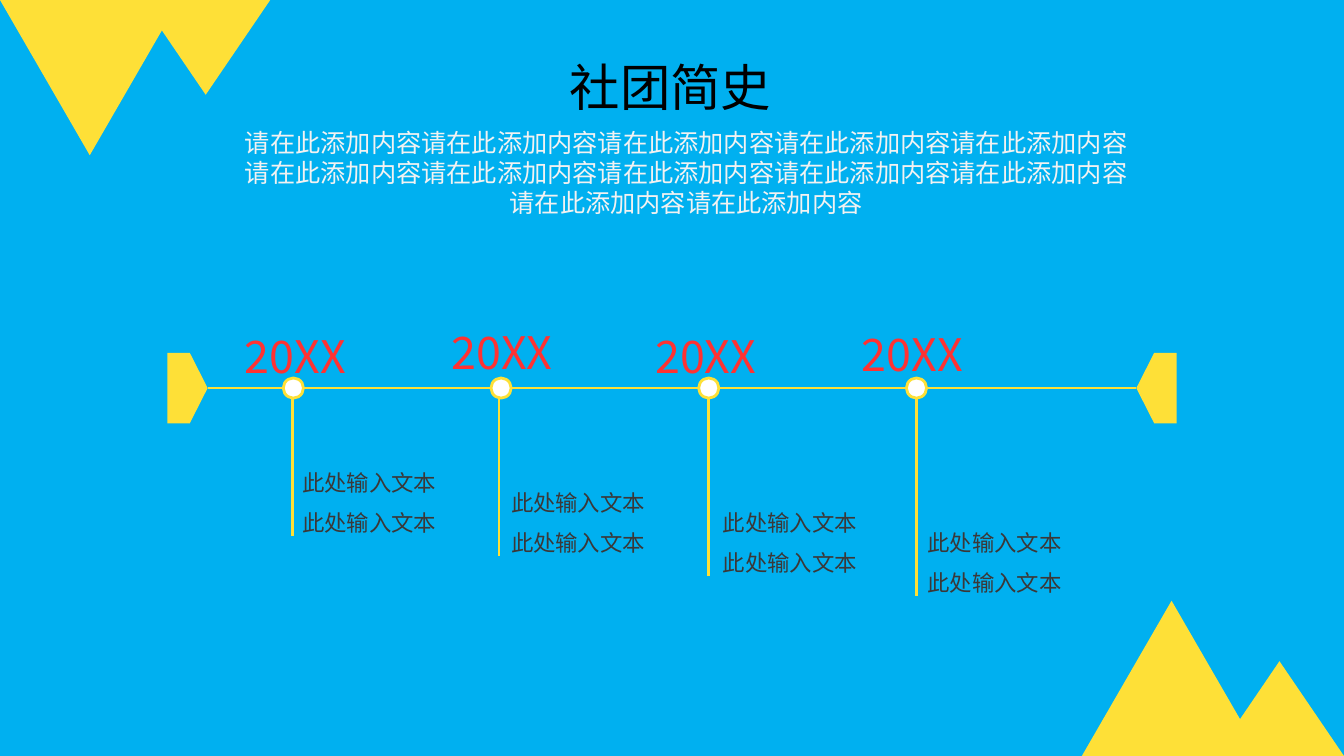
from dataclasses import dataclass

from lxml import etree
from pptx import Presentation
from pptx.dml.color import RGBColor
from pptx.enum.shapes import MSO_CONNECTOR, MSO_SHAPE
from pptx.enum.text import MSO_ANCHOR, MSO_AUTO_SIZE, PP_ALIGN
from pptx.oxml.ns import qn
from pptx.util import Inches, Pt

TRIANGLE, PENTAGON, OVAL = MSO_SHAPE.ISOSCELES_TRIANGLE, MSO_SHAPE.PENTAGON, MSO_SHAPE.OVAL
STRAIGHT = MSO_CONNECTOR.STRAIGHT
CENTER, LEFT = PP_ALIGN.CENTER, PP_ALIGN.LEFT
TOP, BOTTOM = MSO_ANCHOR.TOP, MSO_ANCHOR.BOTTOM

BLUE, YELLOW, WHITE = "00B0F0", "FEE037", "FFFFFF"
BLACK, PALE, RED, GREY = "000000", "F2F2F2", "FF3232", "3B3838"
SLIDE_W, SLIDE_H = 13.33, 7.5
AXIS_Y, AXIS_START, AXIS_END = 3.85, 2.06, 11.27
DOT, DOT_LEFT, DOT_STEP = 0.2, 2.81, 2.06
STEM_TOP, STEM_END, STEM_STEP = 3.94, 5.32, 0.197
NOTE_TOP = 3.89


@dataclass(frozen=True)
class Box:
    left: float
    top: float
    width: float
    height: float

    def lengths(self) -> list:
        return [Inches(v) for v in (self.left, self.top, self.width, self.height)]


@dataclass(frozen=True)
class Style:
    font: str
    size: int
    color: str
    align: PP_ALIGN = CENTER
    spacing: float | None = None


@dataclass(frozen=True)
class Milestone:
    year_left: float
    year_top: float
    stem_x: float
    note_left: float


TITLE = Style("Calibri", 36, BLACK)
INTRO = Style("Calibri", 18, PALE)
YEAR = Style("Noto Sans CJK JP", 32, RED)
NOTE = Style("Noto Sans CJK SC", 16, GREY, LEFT, 1.5)

MILESTONES = [
    Milestone(2.29, 3.21, 2.9, 2.9),
    Milestone(4.34, 3.17, 4.95, 4.97),
    Milestone(6.36, 3.21, 7.03, 7.07),
    Milestone(8.41, 3.19, 9.09, 9.1),
]
BIG_PEAK, SMALL_PEAK = (1.78, 1.54), (1.28, 0.94)


def rgb(color: str) -> RGBColor:
    return RGBColor.from_string(color)


def add_shape(shapes, kind: MSO_SHAPE, box: Box, fill: str, line: str | None = None):
    sp = shapes.add_shape(kind, *box.lengths())
    sp.shadow.inherit = False
    sp.fill.solid()
    sp.fill.fore_color.rgb = rgb(fill)
    if line:
        sp.line.color.rgb = rgb(line)
        sp.line.width = Pt(2)
    else:
        sp.line.fill.background()
    return sp


def add_line(shapes, x1: float, y1: float, x2: float, y2: float) -> None:
    cxn = shapes.add_connector(STRAIGHT, *[Inches(v) for v in (x1, y1, x2, y2)])
    cxn.line.color.rgb = rgb(YELLOW)
    cxn.line.width = Pt(2)
    etree.SubElement(cxn._element.spPr, qn("a:effectLst"))


def write_text(tf, text: str, style: Style, anchor: MSO_ANCHOR = TOP) -> None:
    tf.word_wrap = True
    tf.auto_size = MSO_AUTO_SIZE.NONE
    tf.vertical_anchor = anchor
    tf.text = text
    for p in tf.paragraphs:
        p.alignment = style.align
        p.line_spacing = style.spacing
        p.font.name = style.font
        p.font.size = Pt(style.size)
        p.font.color.rgb = rgb(style.color)


def add_text(shapes, box: Box, text: str, style: Style, anchor: MSO_ANCHOR = TOP):
    tf = shapes.add_textbox(*box.lengths()).text_frame
    write_text(tf, text, style, anchor)
    return tf


def add_mountains(shapes) -> None:
    for (w, h), top_left, bottom_left in ((BIG_PEAK, 0, 10.73), (SMALL_PEAK, 1.4, 12.05)):
        add_shape(shapes, TRIANGLE, Box(top_left, 0, w, h), YELLOW).rotation = 180
        add_shape(shapes, TRIANGLE, Box(bottom_left, SLIDE_H - h, w, h), YELLOW)


def add_axis(shapes) -> None:
    add_line(shapes, AXIS_START, AXIS_Y, AXIS_END, AXIS_Y)
    for left, rotation in ((AXIS_START - 0.4, 0), (AXIS_END, 180)):
        sp = add_shape(shapes, PENTAGON, Box(left, AXIS_Y - 0.35, 0.4, 0.7), YELLOW)
        sp.adjustments[0] = 0.443
        sp.rotation = rotation


def add_milestone(shapes, index: int, item: Milestone) -> None:
    stem_end = STEM_END + index * STEM_STEP
    marker = shapes.add_group_shape().shapes
    dot = Box(DOT_LEFT + index * DOT_STEP, AXIS_Y - DOT / 2, DOT, DOT)
    add_shape(marker, OVAL, dot, WHITE, YELLOW)
    add_line(marker, item.stem_x, STEM_TOP, item.stem_x, stem_end)

    add_text(shapes, Box(item.year_left, item.year_top, 1.28, 0.64), "20XX", YEAR)
    note = Box(item.note_left, NOTE_TOP, 1.72, stem_end - NOTE_TOP)
    tf = add_text(shapes, note, "此处输入文本\n此处输入文本", NOTE, BOTTOM)
    tf.margin_left = Inches(0.1)
    tf.margin_top = tf.margin_right = tf.margin_bottom = 0


def main() -> None:
    prs = Presentation()
    prs.slide_width, prs.slide_height = Inches(SLIDE_W), Inches(SLIDE_H)
    slide = prs.slides.add_slide(prs.slide_layouts[5])
    slide.background.fill.solid()
    slide.background.fill.fore_color.rgb = rgb(BLUE)
    shapes = slide.shapes

    title = shapes.title
    title.left, title.top, title.width, title.height = Box(5.47, 0.51, 2.36, 0.71).lengths()
    write_text(title.text_frame, "社团简史", TITLE)

    add_mountains(shapes)
    add_text(shapes, Box(2.23, 1.21, 9.15, 1.01), "请在此添加内容" * 12, INTRO)
    add_axis(shapes)
    for index, item in enumerate(MILESTONES):
        add_milestone(shapes, index, item)

    prs.save("out.pptx")


if __name__ == "__main__":
    main()
